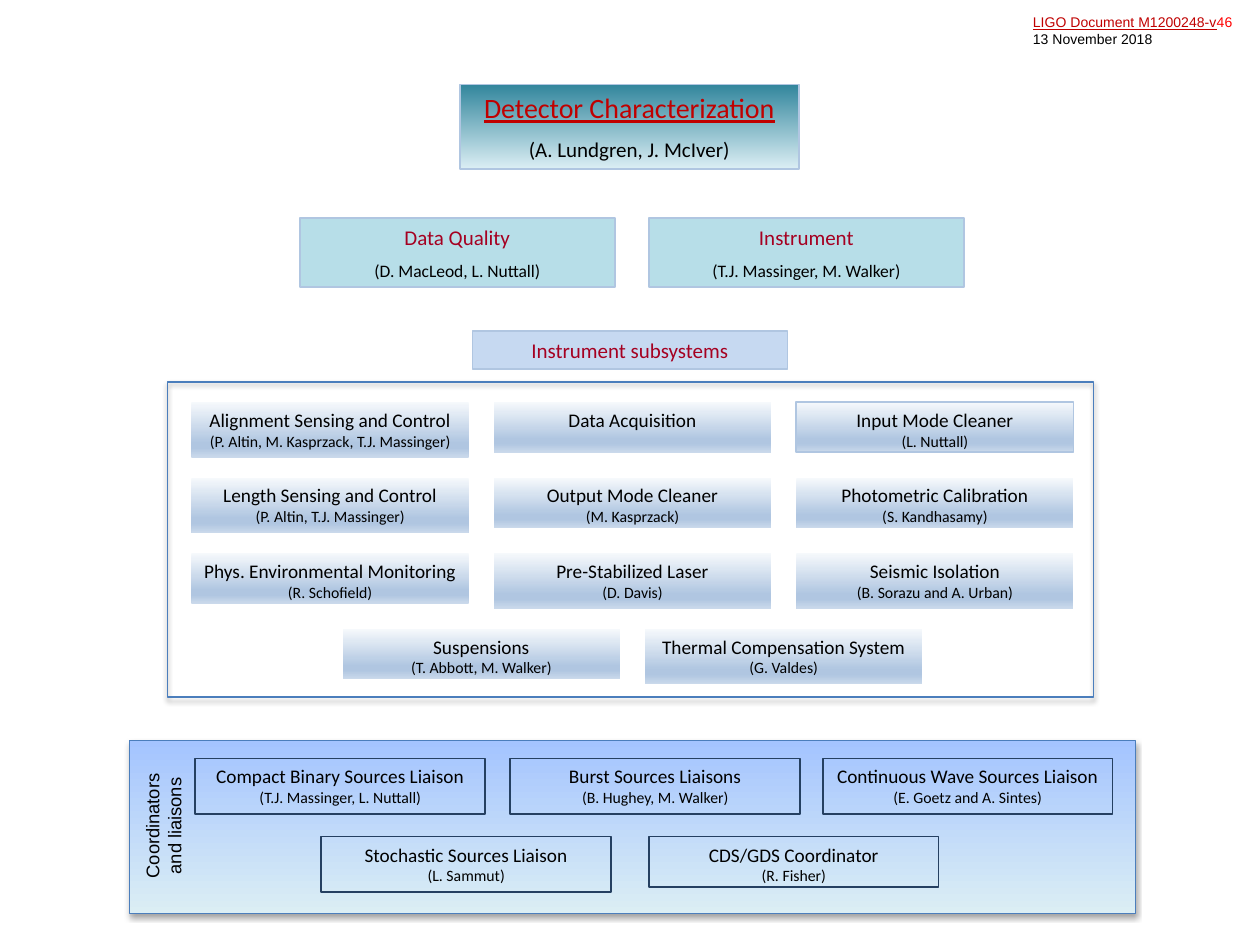
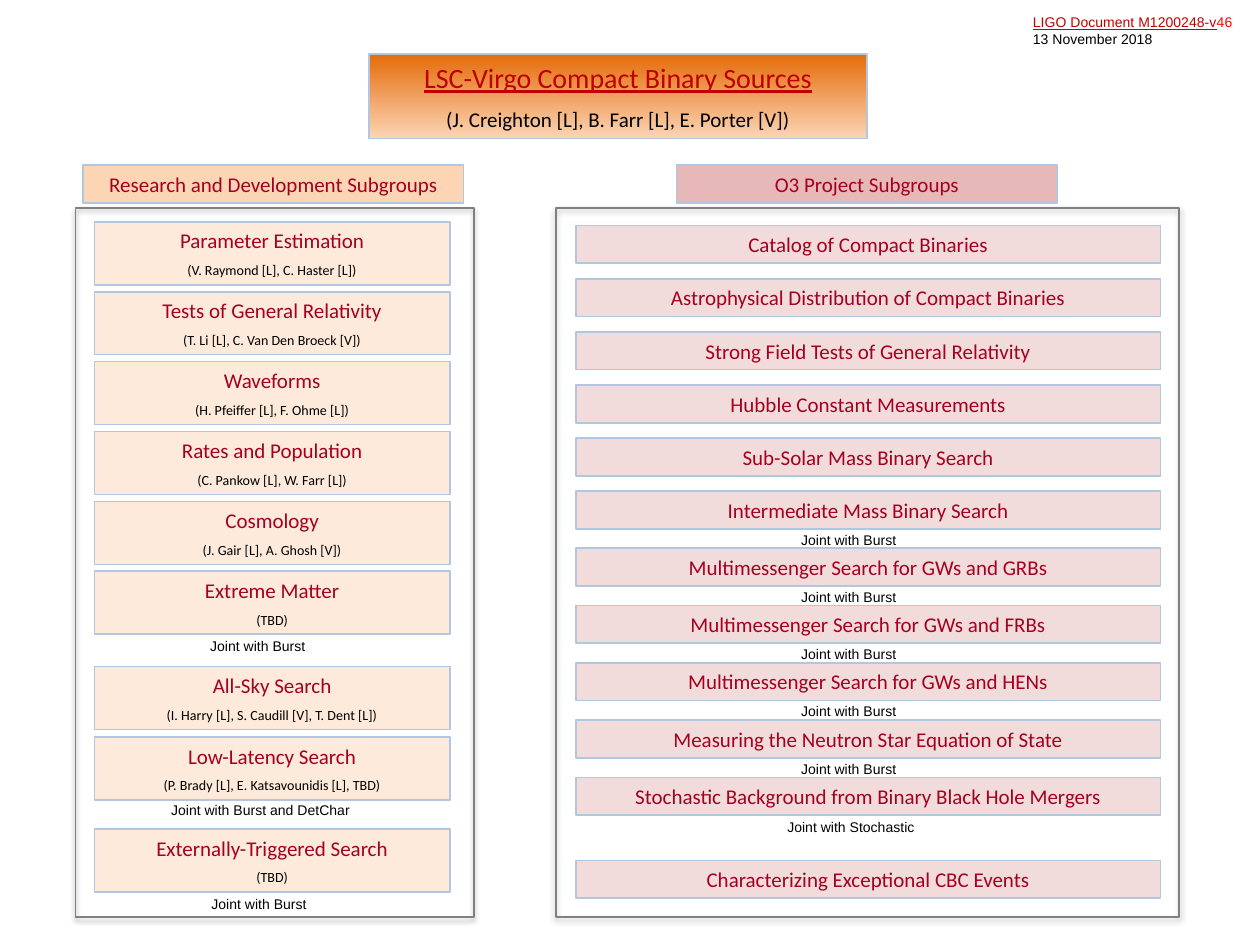
from lxml import etree
from pptx import Presentation
from pptx import util as u
from pptx.dml.color import RGBColor
from pptx.enum import shapes, text
from pptx.oxml.ns import qn

BLACK, RED, WINE = "000000", "C00000", "A50021"
EDGE, FRAME, NAVY, GREY = "B0C6E1", "4B7EBC", "254061", "808080"
STEEL = [(0, "F6F9FC"), (74, EDGE), (83, EDGE), (100, "CAD9EB")]
TEAL = [(0, "31859C"), (100, "DBEEF4")]
FLAME = [(0, "E46C0A"), (100, "FCD5B5")]
SKY = [(0, "A4C4FF"), (100, "DBEEF4")]
LEFT, MID = text.PP_ALIGN.LEFT, text.PP_ALIGN.CENTER

SYSTEMS = [
    [("Alignment Sensing and Control", "(P. Altin, M. Kasprzack, T.J. Massinger)", 0.44),
     ("Data Acquisition", "", 0.4),
     ("Input Mode Cleaner", "(L. Nuttall)", 0.4)],
    [("Length Sensing and Control", "(P. Altin, T.J. Massinger)", 0.44),
     ("Output Mode Cleaner", "(M. Kasprzack)", 0.4),
     ("Photometric Calibration", "(S. Kandhasamy)", 0.4)],
    [("Phys. Environmental Monitoring", "(R. Schofield)", 0.4),
     ("Pre-Stabilized Laser", "(D. Davis)", 0.44),
     ("Seismic Isolation", "(B. Sorazu and A. Urban)", 0.44)],
    [("Suspensions", "(T. Abbott, M. Walker)", 0.4),
     ("Thermal Compensation System", "(G. Valdes)", 0.44)],
]
LIAISONS = [
    (1.55, 6.02, 0.44, "Compact Binary Sources Liaison", "(T.J. Massinger, L. Nuttall)"),
    (4.05, 6.02, 0.44, "Burst Sources Liaisons", "(B. Hughey, M. Walker)"),
    (6.53, 6.02, 0.44, "Continuous Wave Sources Liaison", "(E. Goetz and A. Sintes)"),
    (2.55, 6.64, 0.44, "Stochastic Sources Liaison", "(L. Sammut)"),
    (5.15, 6.64, 0.4, "CDS/GDS Coordinator", "(R. Fisher)"),
]
RESEARCH = [
    ("Parameter Estimation", "(V. Raymond [L], C. Haster [L])"),
    ("Tests of General Relativity", "(T. Li [L], C. Van Den Broeck [V])"),
    ("Waveforms", "(H. Pfeiffer [L], F. Ohme [L])"),
    ("Rates and Population", "(C. Pankow [L], W. Farr [L])"),
    ("Cosmology", "(J. Gair [L], A. Ghosh [V])"),
    ("Extreme Matter", "(TBD)"),
    ("All-Sky Search", "(I. Harry [L], S. Caudill [V], T. Dent [L])"),
    ("Low-Latency Search", "(P. Brady [L], E. Katsavounidis [L], TBD)"),
    ("Externally-Triggered Search", "(TBD)"),
]
PROJECTS = [
    "Catalog of Compact Binaries",
    "Astrophysical Distribution of Compact Binaries",
    "Strong Field Tests of General Relativity",
    "Hubble Constant Measurements",
    "Sub-Solar Mass Binary Search",
    "Intermediate Mass Binary Search",
    "Multimessenger Search for GWs and GRBs",
    "Multimessenger Search for GWs and FRBs",
    "Multimessenger Search for GWs and HENs",
    "Measuring the Neutron Star Equation of State",
    "Stochastic Background from Binary Black Hole Mergers",
    "Characterizing Exceptional CBC Events",
]


def tint(code):
    return RGBColor.from_string(code)


def write(frame, words, size=11, color=BLACK, font="Calibri", under=False,
          gap=0, side=MID, join=False):
    para = frame.paragraphs[-1]
    if para.runs and not join:
        para = frame.add_paragraph()
    para.alignment = side
    para.space_before = u.Pt(gap)
    run = para.add_run()
    run.text = words
    run.font.name, run.font.size = font, u.Pt(size)
    run.font.bold, run.font.underline = False, under
    run.font.color.rgb = tint(color)


class Chart:
    def __init__(self):
        self.deck = Presentation()
        self.deck.slide_width = u.Inches(10)
        self.deck.slide_height = u.Inches(7.5)
        self.slide = None

    def page(self, area, name, who, fill):
        self.slide = self.deck.slides.add_slide(self.deck.slide_layouts[5])
        title = self.slide.shapes.title
        title.left, title.top, title.width, title.height = map(u.Inches, area)
        self.paint(title, fill, EDGE)
        self.label(title, name, who, 16, 12, RED, gap=7.2, under=True)
        frame = self.note(8.1, 0.06, 1.84, "LIGO Document M1200248-v", 0.37,
                          color=RED, under=True)
        write(frame, "46", 8, "FF0000", "Arial", side=LEFT, join=True)
        write(frame, "13 November 2018", 8, font="Arial", side=LEFT)

    def paint(self, shape, fill=None, line=None, width=1):
        if fill is None:
            shape.fill.background()
        elif isinstance(fill, str):
            shape.fill.solid()
            shape.fill.fore_color.rgb = tint(fill)
        else:
            self.blend(shape, fill)
        if line:
            shape.line.color.rgb = tint(line)
            shape.line.width = u.Pt(width)
        else:
            shape.line.fill.background()
        shape.shadow.inherit = False

    def blend(self, shape, stops):
        shape.fill.gradient()
        shape.fill.gradient_angle = 270
        ramp = shape._element.spPr.find(qn("a:gradFill")).find(qn("a:gsLst"))
        for old in list(ramp):
            ramp.remove(old)
        for spot, code in stops:
            stop = etree.SubElement(ramp, qn("a:gs"), pos=str(spot * 1000))
            etree.SubElement(stop, qn("a:srgbClr"), val=code)

    def box(self, x, y, w, h, fill=None, line=None, width=1):
        shape = self.slide.shapes.add_shape(
            shapes.MSO_SHAPE.RECTANGLE, *map(u.Inches, (x, y, w, h)))
        self.paint(shape, fill, line, width)
        return shape

    def panel(self, x, y, w, h, line, fill=None, width=1):
        shape = self.box(x, y, w, h, fill, line, width)
        glow = shape._element.spPr.find(qn("a:effectLst"))
        shade = etree.SubElement(
            glow, qn("a:outerShdw"), blurRad=str(u.Pt(3.1)), dist=str(u.Pt(1.8)),
            dir="5400000", rotWithShape="0")
        color = etree.SubElement(shade, qn("a:srgbClr"), val=BLACK)
        etree.SubElement(color, qn("a:alpha"), val="35000")

    def label(self, shape, name, who, size, small, color, gap=0, under=False):
        frame = shape.text_frame
        frame.word_wrap = True
        frame.auto_size = text.MSO_AUTO_SIZE.NONE
        frame.vertical_anchor = text.MSO_ANCHOR.TOP
        frame.margin_left = frame.margin_right = u.Inches(0.05)
        write(frame, name, size, color, under=under)
        if who:
            write(frame, who, small, gap=gap)

    def unit(self, x, y, h, name, who, w, fill=None, line=None):
        shape = self.box(x, y, w, h, fill, line)
        self.label(shape, name, who, 11, 9, BLACK)

    def group(self, x, y, w, name, fill, who="", h=0.3, small=8):
        shape = self.box(x, y, w, h, fill, EDGE)
        self.label(shape, name, who, 12, small, WINE, gap=small * 0.6)

    def note(self, x, y, w, words, h=0.24, size=8, side=LEFT, turn=0, **look):
        area = self.slide.shapes.add_textbox(*map(u.Inches, (x, y, w, h)))
        area.rotation = turn
        area.text_frame.word_wrap = True
        write(area.text_frame, words, size, font="Arial", side=side, **look)
        return area.text_frame

    def detector(self):
        self.page((3.65, 0.67, 2.69, 0.67), "Detector Characterization",
                  "(A. Lundgren, J. McIver)", TEAL)
        for x, name, who in [(2.38, "Data Quality", "(D. MacLeod, L. Nuttall)"),
                             (5.15, "Instrument", "(T.J. Massinger, M. Walker)")]:
            self.group(x, 1.73, 2.5, name, "B7DEE8", who, 0.55, 10)
        self.group(3.75, 2.63, 2.5, "Instrument subsystems", "C6D9F1")

        self.panel(1.33, 3.03, 7.35, 2.5, FRAME)
        for row, units in enumerate(SYSTEMS):
            start = 1.52 + 1.2 * (3 - len(units))
            for col, (name, who, h) in enumerate(units):
                line = EDGE if name == "Input Mode Cleaner" else None
                self.unit(start + 2.4 * col, 3.19 + 0.6 * row, h, name, who,
                          2.2, STEEL, line)

        self.panel(1.03, 5.88, 7.98, 1.37, FRAME, SKY, 0.75)
        for x, y, h, name, who in LIAISONS:
            self.unit(x, y, h, name, who, 2.3, line=NAVY)
        frame = self.note(0.61, 6.33, 1.37, "Coordinators", 0.45, 10.5, MID, 270)
        write(frame, "and liaisons", 10.5, font="Arial")

    def binary(self):
        self.page((2.93, 0.43, 3.95, 0.67), "LSC-Virgo Compact Binary Sources",
                  "(J. Creighton [L], B. Farr [L], E. Porter [V])", FLAME)
        self.group(0.66, 1.31, 3.02, "Research and Development Subgroups", "FCD5B5")
        self.group(5.37, 1.31, 3.02, "O3 Project Subgroups", "E6B9B8")
        self.panel(0.6, 1.65, 3.16, 5.63, GREY)
        self.panel(4.41, 1.65, 4.95, 5.63, GREY)

        tops = [1.76 + 1.11 * i / 2 for i in range(6)] + [5.29, 5.85, 6.58]
        for y, (name, who) in zip(tops, RESEARCH):
            self.group(0.75, y, 2.82, name, "FDEADA", who, 0.5)
        self.note(1.57, 5.01, 1, "Joint with Burst")
        self.note(1.26, 6.31, 1.64, "Joint with Burst and DetChar")
        self.note(1.58, 7.06, 1, "Joint with Burst")

        tops = [1.79 + 2.11 * i / 5 for i in range(6)]
        tops += [4.35 + 0.91 * i / 2 for i in range(5)] + [6.83]
        for y, name in zip(tops, PROJECTS):
            self.group(4.57, y, 4.64, name, "F2DCDB")
        for y in tops[5:10]:
            self.note(6.26, y + 0.27, 1, "Joint with Burst")
        self.note(6.15, 6.45, 1.22, "Joint with Stochastic")


def main():
    chart = Chart()
    chart.detector()
    chart.binary()
    chart.deck.save("out.pptx")


if __name__ == "__main__":
    main()
